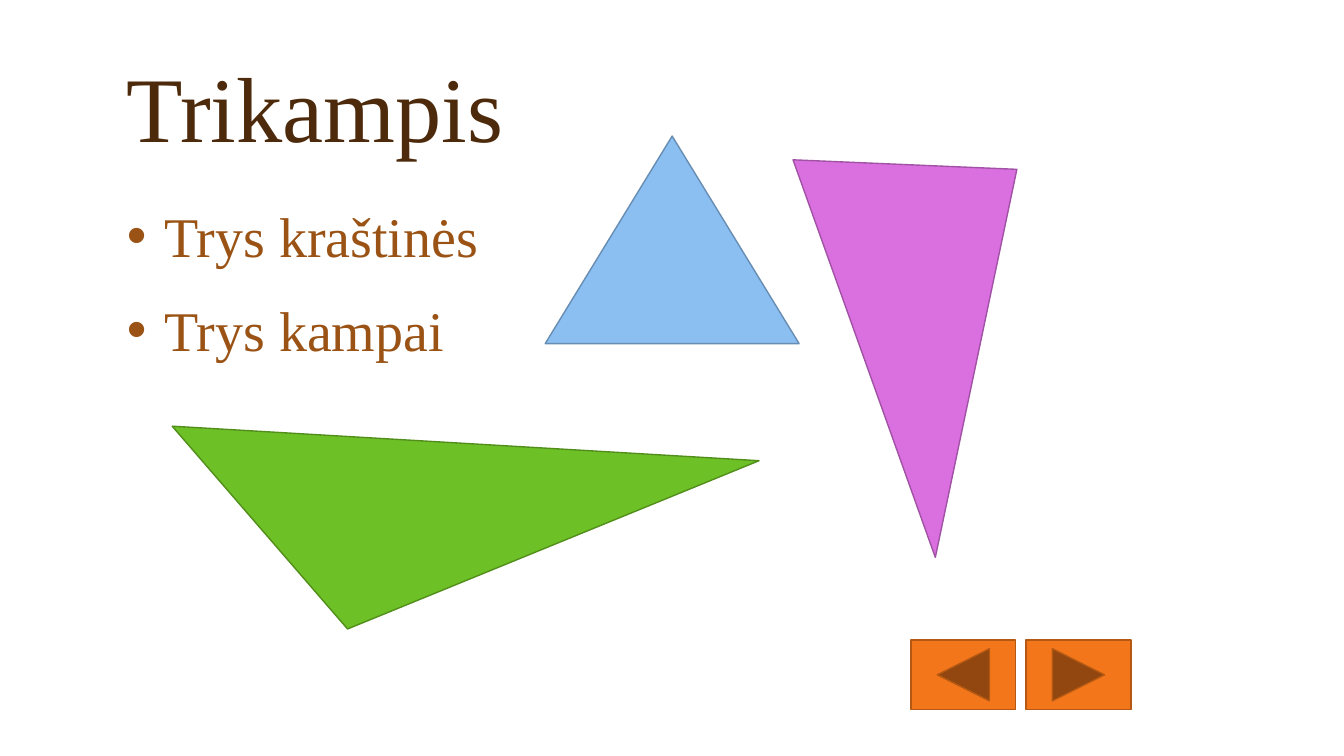
from dataclasses import dataclass

from lxml import etree
from pptx import Presentation
from pptx.dml import color
from pptx.enum import shapes, text
from pptx.oxml import ns
from pptx.shapes.autoshape import Shape
from pptx.slide import Slide
from pptx.util import Cm, Pt


@dataclass(frozen=True)
class Theme:
    font: str = "Times New Roman"
    title_size: float = 66
    body_size: float = 40
    title: str = "4D2A0B"
    body: str = "9A5315"
    blue: tuple[str, str] = ("8BBEF1", "678DB2")
    green: tuple[str, str] = ("6DC025", "518E1B")
    violet: tuple[str, str] = ("DA6FDF", "A152A5")
    orange: tuple[str, str] = ("F3771A", "B45813")


@dataclass(frozen=True)
class Figure:
    preset: shapes.MSO_SHAPE
    left: float
    top: float
    width: float
    height: float
    colors: tuple[str, str]
    rotation: float = 0
    apex: float | None = None


@dataclass(frozen=True)
class TextBlock:
    lines: tuple[str, ...]
    top: float
    height: float
    size: float
    color: str
    anchor: text.MSO_ANCHOR
    line_spacing: float = 1
    space_before: float = 0
    bulleted: bool = False


THEME = Theme()
TEXT_LEFT, TEXT_WIDTH = 2.95, 27.94
BULLET_INDENT = Cm(0.95)
BUTTON_LEFT, BUTTON_PITCH = 22.96, 2.9

TEXT_BLOCKS = (
    TextBlock(("Trikampis",), 0.84, 3.38, THEME.title_size, THEME.title,
              text.MSO_ANCHOR.BOTTOM, line_spacing=0.9),
    TextBlock(("Trys kraštinės", "Trys kampai"), 4.95, 11.73, THEME.body_size, THEME.body,
              text.MSO_ANCHOR.TOP, space_before=19, bulleted=True),
)
TRIANGLES = (
    Figure(shapes.MSO_SHAPE.ISOSCELES_TRIANGLE, 13.74, 3.43, 6.4, 5.23, THEME.blue),
    Figure(shapes.MSO_SHAPE.ISOSCELES_TRIANGLE, 18.92, 5.54, 10.64, 5.23, THEME.violet,
           rotation=70.3, apex=0.2),
)
OBTUSE_CORNERS = ((8.76, 15.85), (4.34, 10.74), (19.13, 11.61))
BUTTON_PRESETS = (
    shapes.MSO_SHAPE.ACTION_BUTTON_BACK_OR_PREVIOUS,
    shapes.MSO_SHAPE.ACTION_BUTTON_FORWARD_OR_NEXT,
)


def paint(shape: Shape, colors: tuple[str, str]) -> None:
    fill, line = colors
    shape.shadow.inherit = False
    shape.fill.solid()
    shape.fill.fore_color.rgb = color.RGBColor.from_string(fill)
    shape.line.color.rgb = color.RGBColor.from_string(line)
    shape.line.width = Pt(1)


def add_figure(slide: Slide, figure: Figure) -> None:
    shape = slide.shapes.add_shape(figure.preset, Cm(figure.left), Cm(figure.top),
                                   Cm(figure.width), Cm(figure.height))
    shape.rotation = figure.rotation
    if figure.apex is not None:
        shape.adjustments[0] = figure.apex
    paint(shape, figure.colors)


def add_polygon(slide: Slide, corners: tuple[tuple[float, float], ...],
                colors: tuple[str, str]) -> None:
    start, *others = [(Cm(x), Cm(y)) for x, y in corners]
    builder = slide.shapes.build_freeform(*start)
    builder.add_line_segments(others, close=True)
    paint(builder.convert_to_shape(), colors)


def add_bullet(paragraph) -> None:
    properties = paragraph._p.get_or_add_pPr()
    properties.set("marL", str(BULLET_INDENT))
    properties.set("indent", str(-BULLET_INDENT))
    etree.SubElement(properties, ns.qn("a:buFont")).set("typeface", "Arial")
    etree.SubElement(properties, ns.qn("a:buChar")).set("char", "•")


def add_text(slide: Slide, block: TextBlock) -> None:
    box = slide.shapes.add_textbox(Cm(TEXT_LEFT), Cm(block.top), Cm(TEXT_WIDTH), Cm(block.height))
    frame = box.text_frame
    frame.word_wrap = True
    frame.vertical_anchor = block.anchor
    frame.text = "\n".join(block.lines)
    for index, paragraph in enumerate(frame.paragraphs):
        if block.bulleted:
            add_bullet(paragraph)
        paragraph.line_spacing = block.line_spacing
        paragraph.space_before = Pt(block.space_before if index else 0)
        for run in paragraph.runs:
            run.font.name = THEME.font
            run.font.size = Pt(block.size)
            run.font.color.rgb = color.RGBColor.from_string(block.color)


def main() -> None:
    presentation = Presentation()
    presentation.slide_width, presentation.slide_height = Cm(33.87), Cm(19.05)
    slide = presentation.slides.add_slide(presentation.slide_layouts[6])
    for block in TEXT_BLOCKS:
        add_text(slide, block)
    add_polygon(slide, OBTUSE_CORNERS, THEME.green)
    for triangle in TRIANGLES:
        add_figure(slide, triangle)
    for index, preset in enumerate(BUTTON_PRESETS):
        add_figure(slide, Figure(preset, BUTTON_LEFT + index * BUTTON_PITCH, 16.13,
                                 2.64, 1.75, THEME.orange))
    presentation.save("out.pptx")


if __name__ == "__main__":
    main()
